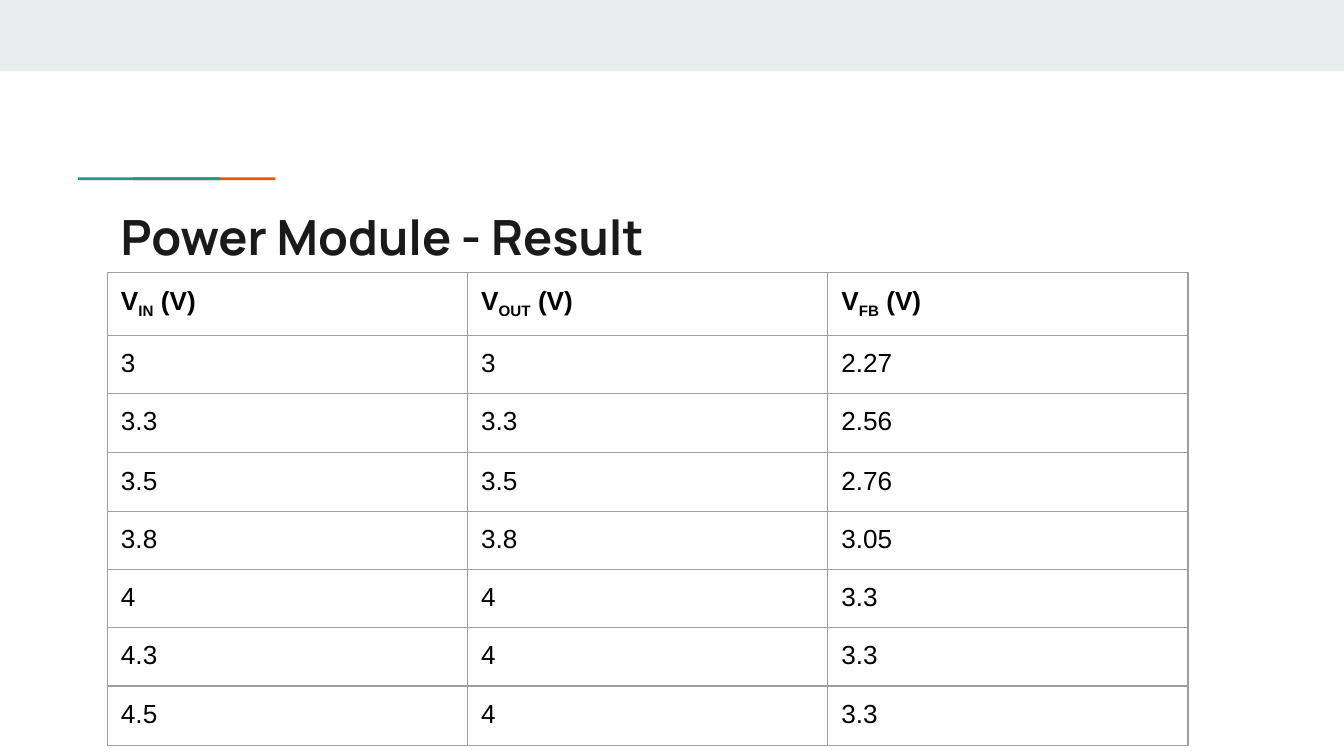
from typing import NamedTuple

from lxml import etree
from pptx import Presentation
from pptx.dml.color import RGBColor
from pptx.enum.shapes import MSO_SHAPE
from pptx.enum.text import MSO_ANCHOR
from pptx.oxml.ns import qn
from pptx.util import Inches, Pt

RECTANGLE = MSO_SHAPE.RECTANGLE
TOP = MSO_ANCHOR.TOP
INSET = Inches(0.1)
BORDER_COLOUR = "9E9E9E"
BORDER_POINTS = 0.75
COLUMN_WIDTH = 2.68
TABLE_HEIGHT = 3.28
ROW_HEIGHTS = [0.24, 0.4, 0.44, 0.4, 0.4, 0.4, 0.4, 0.44]
SUBSCRIPTS = ["IN", "OUT", "FB"]
READINGS = [
    ("3", "3", "2.27"),
    ("3.3", "3.3", "2.56"),
    ("3.5", "3.5", "2.76"),
    ("3.8", "3.8", "3.05"),
    ("4", "4", "3.3"),
    ("4.3", "4", "3.3"),
    ("4.5", "4", "3.3"),
]


class Bar(NamedTuple):
    left: float
    top: float
    width: float
    height: float
    colour: str


class Span(NamedTuple):
    text: str
    size: float = 14
    font: str = "Arial"
    colour: str = "000000"
    bold: bool = False
    baseline: int = 0


BARS = [
    Bar(0, 0, 10, 0.53, "E9EDEE"),
    Bar(0.99, 1.32, 1.06, 0.02, "EB5600"),
    Bar(0.58, 1.32, 1.06, 0.02, "1A9988"),
]


def rgb(colour: str) -> RGBColor:
    return RGBColor.from_string(colour)


def draw_bar(page, bar: Bar) -> None:
    shape = page.shapes.add_shape(
        RECTANGLE, Inches(bar.left), Inches(bar.top), Inches(bar.width), Inches(bar.height)
    )
    shape.shadow.inherit = False
    shape.fill.solid()
    shape.fill.fore_color.rgb = rgb(bar.colour)
    shape.line.fill.background()


def write_spans(para, spans: list[Span]) -> None:
    for span in spans:
        run = para.add_run()
        run.text = span.text
        run.font.size = Pt(span.size)
        run.font.name = span.font
        run.font.bold = span.bold
        run.font.color.rgb = rgb(span.colour)
        if span.baseline:
            run.font._element.set("baseline", str(span.baseline * 1000))


def set_insets(holder) -> None:
    holder.margin_left = holder.margin_right = INSET
    holder.margin_top = holder.margin_bottom = INSET


def draw_title(page) -> None:
    box = page.shapes.add_textbox(Inches(0.8), Inches(1.44), Inches(8.41), Inches(0.59))
    frame = box.text_frame
    frame.word_wrap = True
    frame.vertical_anchor = TOP
    set_insets(frame)
    title = Span("Power Module - Result", 26, "Manrope", "1A1A1A", True)
    write_spans(frame.paragraphs[0], [title])


def add_borders(cell) -> None:
    """Outline all four sides; borders must come before the cell's fill."""
    properties = cell._tc.get_or_add_tcPr()
    for index, side in enumerate(("a:lnL", "a:lnR", "a:lnT", "a:lnB")):
        line = etree.Element(qn(side), w=str(Pt(BORDER_POINTS)))
        fill = etree.SubElement(line, qn("a:solidFill"))
        etree.SubElement(fill, qn("a:srgbClr"), val=BORDER_COLOUR)
        properties.insert(index, line)


def draw_table(page) -> None:
    header = [
        [Span("V", bold=True), Span(name, bold=True, baseline=-25), Span(" (V)", bold=True)]
        for name in SUBSCRIPTS
    ]
    rows = [header] + [[[Span(value)] for value in reading] for reading in READINGS]
    frame = page.shapes.add_table(
        len(rows), len(header), Inches(0.8), Inches(2.03),
        Inches(COLUMN_WIDTH * len(header)), Inches(TABLE_HEIGHT),
    )
    table = frame.table
    table.first_row = table.horz_banding = False
    for column in table.columns:
        column.width = Inches(COLUMN_WIDTH)
    for row_index, (row, height) in enumerate(zip(rows, ROW_HEIGHTS)):
        table.rows[row_index].height = Inches(height)
        for column_index, spans in enumerate(row):
            cell = table.cell(row_index, column_index)
            cell.fill.background()
            cell.vertical_anchor = TOP
            set_insets(cell)
            add_borders(cell)
            write_spans(cell.text_frame.paragraphs[0], spans)
    frame.height = Inches(TABLE_HEIGHT)


def main() -> None:
    deck = Presentation()
    deck.slide_width = Inches(10)
    deck.slide_height = deck.slide_width * 9 // 16
    page = deck.slides.add_slide(deck.slide_layouts[6])
    for bar in BARS:
        draw_bar(page, bar)
    draw_title(page)
    draw_table(page)
    deck.save("out.pptx")


if __name__ == "__main__":
    main()
